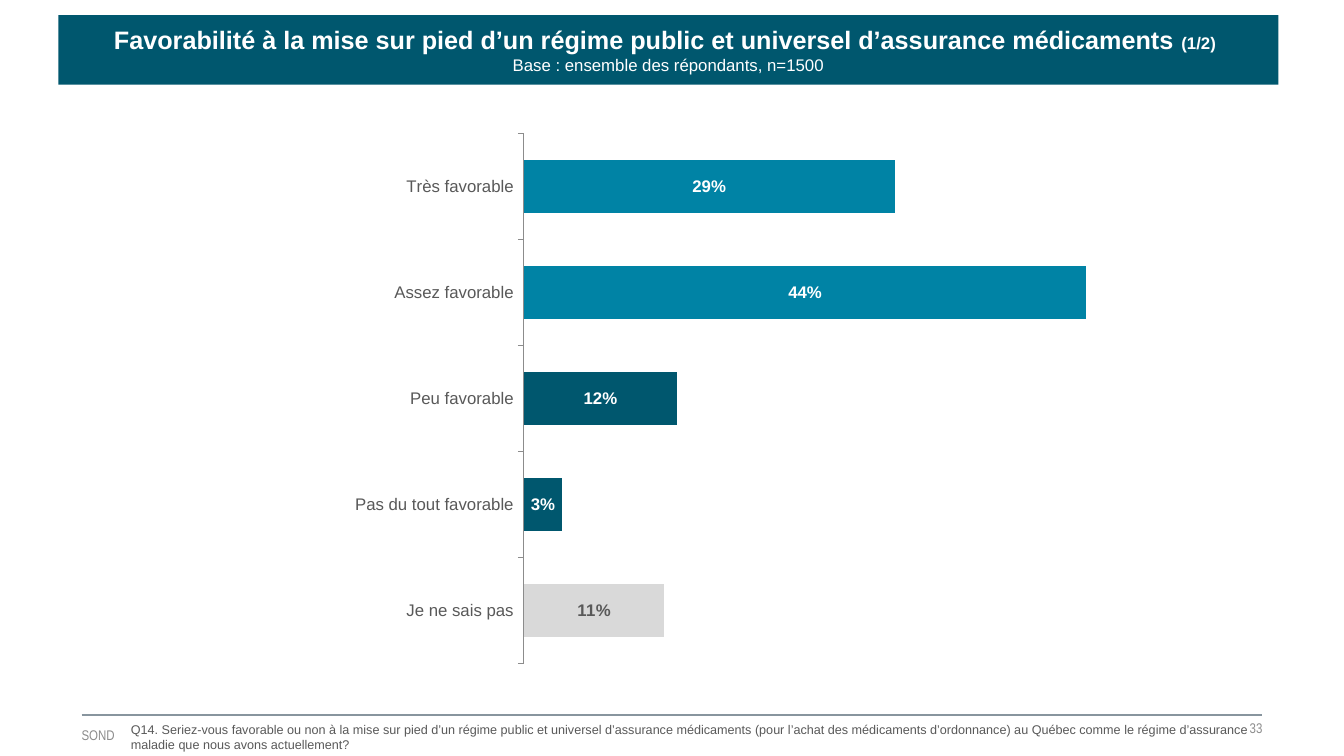
from lxml import etree
from pptx import Presentation
from pptx.chart.data import CategoryChartData
from pptx.dml.color import RGBColor
from pptx.enum.chart import XL_CHART_TYPE, XL_LABEL_POSITION, XL_TICK_MARK
from pptx.enum.shapes import MSO_CONNECTOR, MSO_SHAPE
from pptx.enum.text import MSO_ANCHOR, PP_ALIGN
from pptx.oxml import parse_xml
from pptx.oxml.ns import nsdecls, qn
from pptx.util import Inches, Pt

COLORS = {
    "dark": "00576E",
    "teal": "0083A5",
    "light": "D9D9D9",
    "text": "595959",
    "footer": "8C8C8C",
    "rule": "88959E",
    "white": "FFFFFF",
}


def color(name):
    return RGBColor.from_string(COLORS[name])


def add_text(para, text, size=12, font="Arial", fill="text", bold=False, align=PP_ALIGN.LEFT):
    para.alignment = align
    span = para.add_run()
    span.text = text
    span.font.size = Pt(size)
    span.font.name = font
    span.font.bold = bold
    span.font.color.rgb = color(fill)


deck = Presentation()
deck.slide_width, deck.slide_height = Inches(13.33), Inches(7.5)
page = deck.slides.add_slide(deck.slide_layouts[6])

# Footer rule
rule = page.shapes.add_connector(
    MSO_CONNECTOR.STRAIGHT, Inches(0.81), Inches(7.09), Inches(12.52), Inches(7.09))
rule.line.color.rgb = color("rule")
rule.line.width = Pt(1.5)
etree.SubElement(rule.element.spPr, qn("a:effectLst"))

# Page number and source name
for text, left, top, width, align in (
    ("33", 8.73, 7.09, 3.79, PP_ALIGN.RIGHT),
    ("SOND", 0.81, 7.16, 3.73, PP_ALIGN.LEFT),
):
    box = page.shapes.add_textbox(Inches(left), Inches(top), Inches(width), Inches(0.26))
    frame = box.text_frame
    frame.word_wrap = True
    frame.vertical_anchor = MSO_ANCHOR.MIDDLE
    frame.margin_left = frame.margin_right = frame.margin_top = frame.margin_bottom = 0
    add_text(frame.paragraphs[0], text, size=10, font="Arial Narrow", fill="footer", align=align)

# Survey question
question = page.shapes.add_textbox(Inches(1.2), Inches(7.11), Inches(11.3), Inches(0.4))
question.text_frame.word_wrap = True
add_text(
    question.text_frame.paragraphs[0],
    "Q14. Seriez-vous favorable ou non à la mise sur pied d’un régime public et universel "
    "d’assurance médicaments (pour l’achat des médicaments d’ordonnance) au Québec comme "
    "le régime d’assurance maladie que nous avons actuellement?",
    size=9)

# Bar chart: answer, share, bar colour
answers = [
    ("Très favorable", 0.29, "teal"),
    ("Assez favorable", 0.44, "teal"),
    ("Peu favorable", 0.12, "dark"),
    ("Pas du tout favorable", 0.03, "dark"),
    ("Je ne sais pas", 0.11, "light"),
]
data = CategoryChartData(number_format="0%")
data.categories = [answer for answer, share, fill in answers]
data.add_series("Series 1", [share for answer, share, fill in answers])
chart = page.shapes.add_chart(
    XL_CHART_TYPE.BAR_CLUSTERED, Inches(1.16), Inches(1.15), Inches(11.53), Inches(5.78), data).chart
chart.has_legend = False
chart.has_title = False
chart.font.name = "Calibri"
chart.font.size = Pt(18)

answer_axis = chart.category_axis
answer_axis.reverse_order = True
answer_axis.major_tick_mark = XL_TICK_MARK.OUTSIDE
answer_axis.format.line.color.rgb = color("footer")
answer_axis.tick_labels.font.size = Pt(12)
answer_axis.tick_labels.font.name = "Arial"
answer_axis.tick_labels.font.color.rgb = color("text")

share_axis = chart.value_axis
share_axis.minimum_scale, share_axis.maximum_scale = 0, 0.5
share_axis.has_major_gridlines = False
share_axis.visible = False

plot = chart.plots[0]
plot.gap_width = 100
plot.vary_by_categories = False
series = plot.series[0]
series.format.fill.solid()
series.format.fill.fore_color.rgb = color("dark")
for index, (answer, share, fill) in enumerate(answers):
    point_fill = series.points[index].format.fill
    point_fill.solid()
    point_fill.fore_color.rgb = color(fill)

# Labels in white, the last one in grey on its light bar
labels = series.data_labels
labels.show_value = True
labels.number_format = "0%"
labels.number_format_is_linked = False
last_label = series.points[len(answers) - 1].data_label
for label, fill in ((labels, "white"), (last_label, "text")):
    label.position = XL_LABEL_POSITION.CENTER
    label.font.name = "Arial"
    label.font.size = Pt(12)
    label.font.bold = True
    label.font.color.rgb = color(fill)

# Inner plot area
plot_area = chart.element.chart.plotArea
for old_layout in plot_area.findall(qn("c:layout")):
    plot_area.remove(old_layout)
plot_area.insert(0, parse_xml(
    f'<c:layout {nsdecls("c")}><c:manualLayout><c:layoutTarget val="inner"/>'
    '<c:xMode val="edge"/><c:yMode val="edge"/><c:x val="0.35"/><c:y val="0.03"/>'
    '<c:w val="0.55"/><c:h val="0.91"/></c:manualLayout></c:layout>'))

# Title band
band = page.shapes.add_shape(
    MSO_SHAPE.RECTANGLE, Inches(0.58), Inches(0.15), Inches(12.1), Inches(0.69))
band.shadow.inherit = False
band.fill.solid()
band.fill.fore_color.rgb = color("dark")
band.line.fill.background()
frame = band.text_frame
frame.word_wrap = True
frame.vertical_anchor = MSO_ANCHOR.MIDDLE
frame.margin_left = frame.margin_right = frame.margin_top = frame.margin_bottom = 0
title, base = frame.paragraphs[0], frame.add_paragraph()
for para, text, size, bold in (
    (title, "Favorabilité à la mise sur pied d’un régime public et universel d’assurance médicaments ",
     18, True),
    (title, "(1/2)", 12, True),
    (title, " ", 18, True),
    (base, "Base : ensemble des répondants, n=1500", 12, False),
):
    add_text(para, text, size=size, fill="white", bold=bold, align=PP_ALIGN.CENTER)

deck.save("out.pptx")
